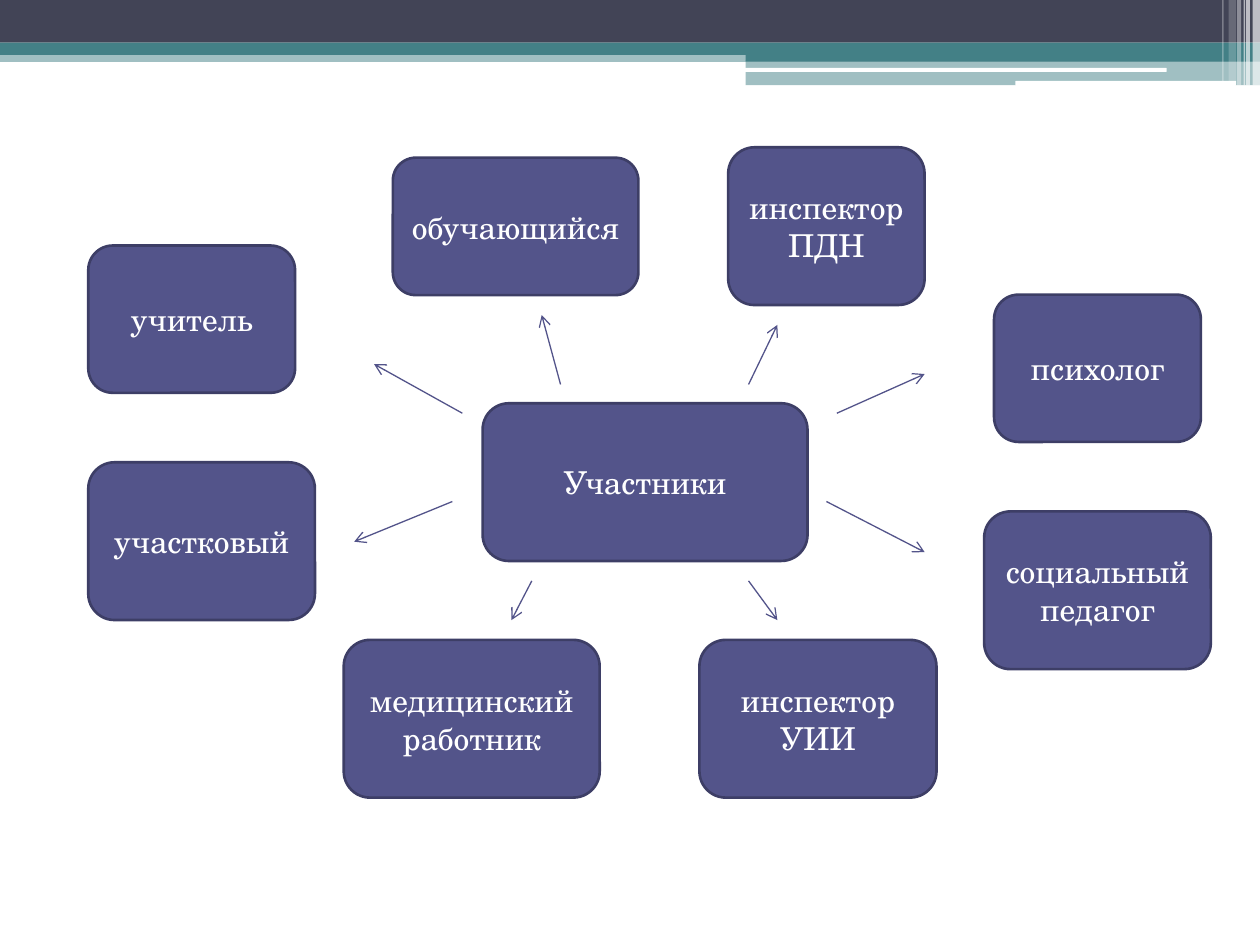
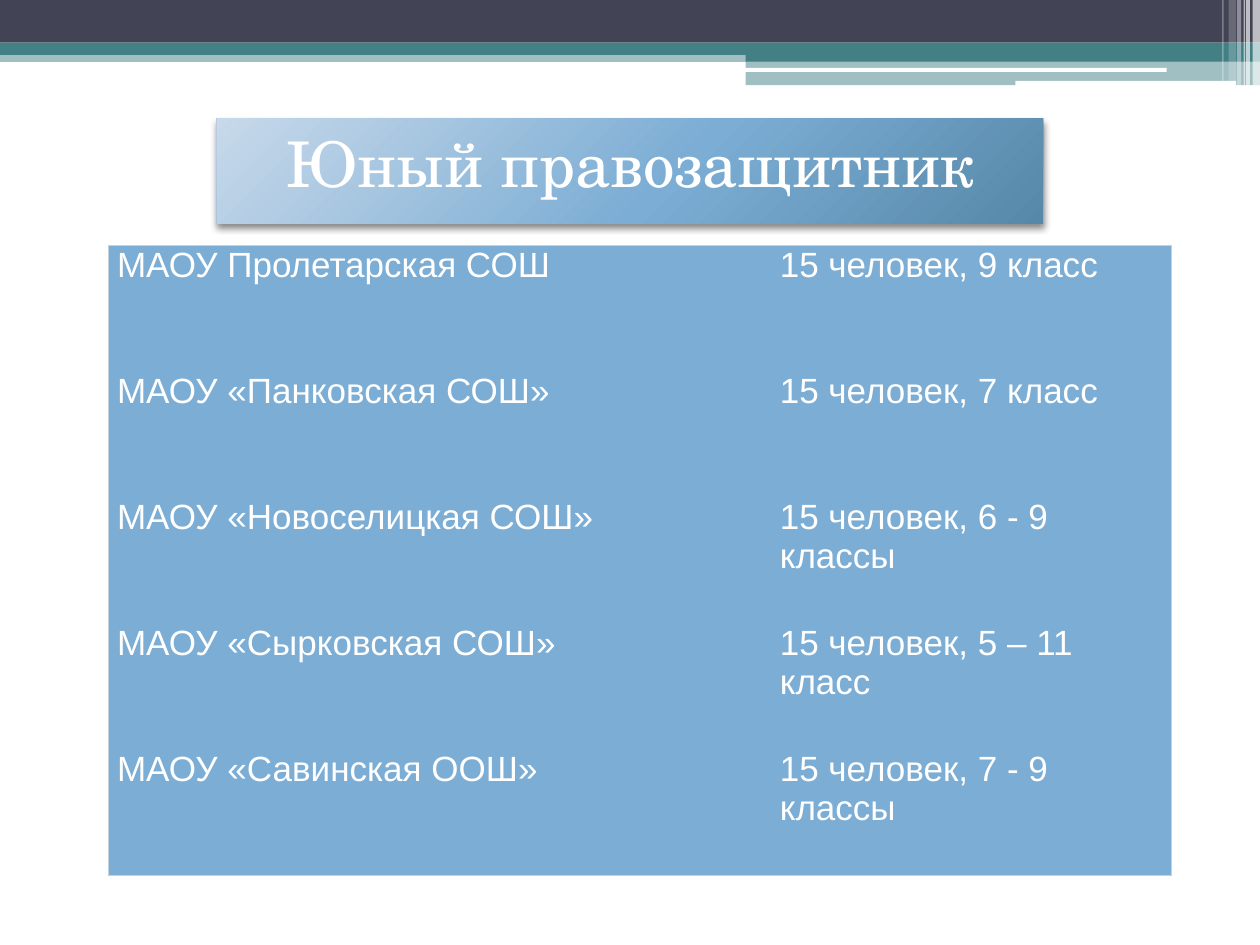
from lxml import etree
from pptx import Presentation
from pptx.dml.color import RGBColor
from pptx.enum.shapes import MSO_CONNECTOR, MSO_SHAPE as SHP
from pptx.enum.text import MSO_ANCHOR, MSO_AUTO_SIZE, PP_ALIGN
from pptx.oxml import parse_xml
from pptx.oxml.ns import nsdecls, qn
from pptx.util import Cm, Pt

COLORS = {
    "dark": "424456", "teal": "438086", "white": "FFFFFF",
    "node": "53548A", "node_line": "3D3E66",
    "pale": "C7D9EA", "blue": "7CADD4", "steel": "5688A9",
    "border": "C4D2DE", "black": "000000",
}
SERIF, SANS = "TeX Gyre Schola", "Arial"
WIDTH = 25.4
PLAIN_TABLE = "{2D5ABB26-0587-4C30-8999-92F81FD0307C}"

# left, top, width, height, colour, opacity in percent
BANDS = [
    (0, 1.02, WIDTH, 0.23, "teal", 50),
    (0, 0, WIDTH, 0.86, "dark", 100),
    (0, 0.86, WIDTH, 0.25, "teal", 100),
    (15.03, 0.99, 10.37, 0.25, "teal", 100),
    (15.03, 1.22, 10.37, 0.5, "teal", 50),
]
ROUNDED_BARS = [(15.01, 1.37, 8.51, 0.08), (20.47, 1.63, 4.45, 0.1)]
# left, width, height, opacity in percent
STRIPES = [
    (25.25, 0.15, 1.73, 65), (25.12, 0.08, 1.73, 65), (25.07, 0.03, 1.73, 60),
    (24.94, 0.08, 1.73, 40), (24.77, 0.15, 1.63, 20), (24.64, 0.03, 1.63, 30),
]

NODES = [
    ("Участники", 9.73, 8.13, 6.55, 3.18),
    ("учитель", 1.78, 4.95, 4.17, 2.97),
    ("обучающийся", 7.92, 3.18, 4.95, 2.77),
    ("инспектор ПДН", 14.68, 2.97, 3.96, 3.18),
    ("психолог", 20.04, 5.94, 4.17, 2.97),
    ("участковый", 1.78, 9.32, 4.57, 3.18),
    ("медицинский работник", 6.93, 12.9, 5.16, 3.18),
    ("инспектор УИИ", 14.1, 12.9, 4.78, 3.18),
    ("социальный педагог", 19.84, 10.31, 4.57, 3.18),
]
ARROWS = [
    (11.3, 7.75, 10.92, 6.35), (15.09, 7.75, 15.67, 6.55),
    (9.32, 8.33, 7.54, 7.34), (9.12, 10.11, 7.14, 10.92),
    (10.72, 11.71, 10.31, 12.5), (15.09, 11.71, 15.67, 12.5),
    (16.66, 10.11, 18.64, 11.13), (16.87, 8.33, 18.64, 7.54),
]
SCHOOLS = [
    ("МАОУ Пролетарская СОШ", "15 человек, 9 класс"),
    ("МАОУ «Панковская СОШ»", "15 человек, 7 класс"),
    ("МАОУ «Новоселицкая СОШ»", "15 человек, 6 - 9 классы"),
    ("МАОУ «Сырковская СОШ»", "15 человек, 5 – 11 класс"),
    ("МАОУ «Савинская ООШ»", "15 человек, 7 - 9 классы"),
]


def rgb(name):
    return RGBColor.from_string(COLORS[name])


class Deck:
    """Holds the style and the slide being built."""

    def __init__(self):
        self.prs = Presentation()
        self.prs.slide_width, self.prs.slide_height = Cm(WIDTH), Cm(19.05)
        self.s = None

    def slide(self, layout):
        self.s = self.prs.slides.add_slide(self.prs.slide_layouts[layout])
        for *box, color, opacity in BANDS:
            self.shape(SHP.RECTANGLE, box, color, opacity)
        for box in ROUNDED_BARS:
            self.shape(SHP.ROUNDED_RECTANGLE, box, "white")
        for left, width, height, opacity in STRIPES:
            self.shape(SHP.RECTANGLE, (left, 0, width, height), "white", opacity)

    def shape(self, kind, box, color, opacity=100):
        sp = self.s.shapes.add_shape(kind, *map(Cm, box))
        sp.shadow.inherit = False
        sp.fill.solid()
        sp.fill.fore_color.rgb = rgb(color)
        sp.line.fill.background()
        if opacity < 100:
            clr = sp.fill._xPr.find(".//" + qn("a:srgbClr"))
            etree.SubElement(clr, qn("a:alpha")).set("val", str(opacity * 1000))
        return sp

    def text(self, tf, text, size, font, align=PP_ALIGN.CENTER):
        tf.text = text
        p = tf.paragraphs[0]
        p.alignment = align
        f = p.runs[0].font
        f.size, f.name, f.color.rgb = Pt(size), font, rgb("white")

    def node(self, text, *box):
        sp = self.shape(SHP.ROUNDED_RECTANGLE, box, "node")
        sp.line.color.rgb, sp.line.width = rgb("node_line"), Pt(1.5)
        sp.text_frame.vertical_anchor = MSO_ANCHOR.MIDDLE
        self.text(sp.text_frame, text, 18, SERIF)

    def arrow(self, *ends):
        c = self.s.shapes.add_connector(MSO_CONNECTOR.STRAIGHT, *map(Cm, ends))
        c.line.color.rgb, c.line.width = rgb("node"), Pt(0.75)
        etree.SubElement(c.line._get_or_add_ln(), qn("a:tailEnd")).set("type", "arrow")
        etree.SubElement(c._element.spPr, qn("a:effectLst"))

    def title(self, text, *box):
        """Title on a radial gradient with a soft shadow below."""
        sp = self.s.shapes.title
        sp.left, sp.top, sp.width, sp.height = map(Cm, box)
        tf = sp.text_frame
        tf.vertical_anchor, tf.auto_size = MSO_ANCHOR.TOP, MSO_AUTO_SIZE.SHAPE_TO_FIT_TEXT
        self.text(tf, text, 36, SERIF)
        stops = "".join(
            f'<a:gs pos="{pos * 1000}"><a:srgbClr val="{COLORS[name]}"/></a:gs>'
            for pos, name in ((0, "pale"), (55, "blue"), (100, "steel")))
        sp_pr = sp._element.spPr
        sp_pr.append(parse_xml(
            f'<a:prstGeom {nsdecls("a")} prst="rect"><a:avLst/></a:prstGeom>'))
        sp_pr.append(parse_xml(
            f'<a:gradFill {nsdecls("a")} rotWithShape="1"><a:gsLst>{stops}</a:gsLst>'
            '<a:path path="circle"><a:fillToRect l="-40000" t="-90000" '
            'r="140000" b="190000"/></a:path></a:gradFill>'))
        sp_pr.append(parse_xml(
            f'<a:effectLst {nsdecls("a")}><a:outerShdw blurRad="{Pt(4)}" dist="{Pt(2)}" '
            f'dir="5400000" rotWithShape="0"><a:srgbClr val="{COLORS["black"]}">'
            '<a:alpha val="45000"/></a:srgbClr></a:outerShdw></a:effectLst>'))

    def border(self, cell, sides):
        """Draw the given sides (L, R, T, B) of a cell."""
        tc_pr = cell._tc.get_or_add_tcPr()
        lines = [side for side in "LRTB" if side in sides]
        for i, side in enumerate(lines):
            tc_pr.insert(i, parse_xml(
                f'<a:ln{side} {nsdecls("a")} w="{Pt(0.75)}"><a:solidFill>'
                f'<a:srgbClr val="{COLORS["border"]}"/></a:solidFill></a:ln{side}>'))

    def table(self, rows, left, top, widths, row_height):
        n, m = len(rows), len(widths)
        t = self.s.shapes.add_table(n, m, Cm(left), Cm(top), Cm(sum(widths)),
                                    Cm(n * row_height)).table
        t.first_row = t.horz_banding = False
        t._tbl.tblPr.find(qn("a:tableStyleId")).text = PLAIN_TABLE
        for col, width in zip(t.columns, widths):
            col.width = Cm(width)
        for i, row in enumerate(rows):
            for j, value in enumerate(row):
                cell = t.cell(i, j)
                cell.margin_left = cell.margin_right = Cm(0.18)
                cell.margin_top = cell.margin_bottom = 0
                cell.fill.solid()
                cell.fill.fore_color.rgb = rgb("blue")
                self.text(cell.text_frame, value, 20, SANS, PP_ALIGN.LEFT)
                self.border(cell, "L" * (j == 0) + "R" * (j == m - 1)
                            + "T" * (i == 0) + "B" * (i == n - 1))


def main():
    deck = Deck()
    deck.slide(6)
    for node in NODES:
        deck.node(*node)
    for ends in ARROWS:
        deck.arrow(*ends)

    deck.slide(5)
    deck.title("Юный правозащитник", 4.37, 2.39, 16.66, 1.8)
    deck.table(SCHOOLS, 2.18, 4.95, (13.36, 8.08), 2.54)
    deck.prs.save("out.pptx")


if __name__ == "__main__":
    main()
